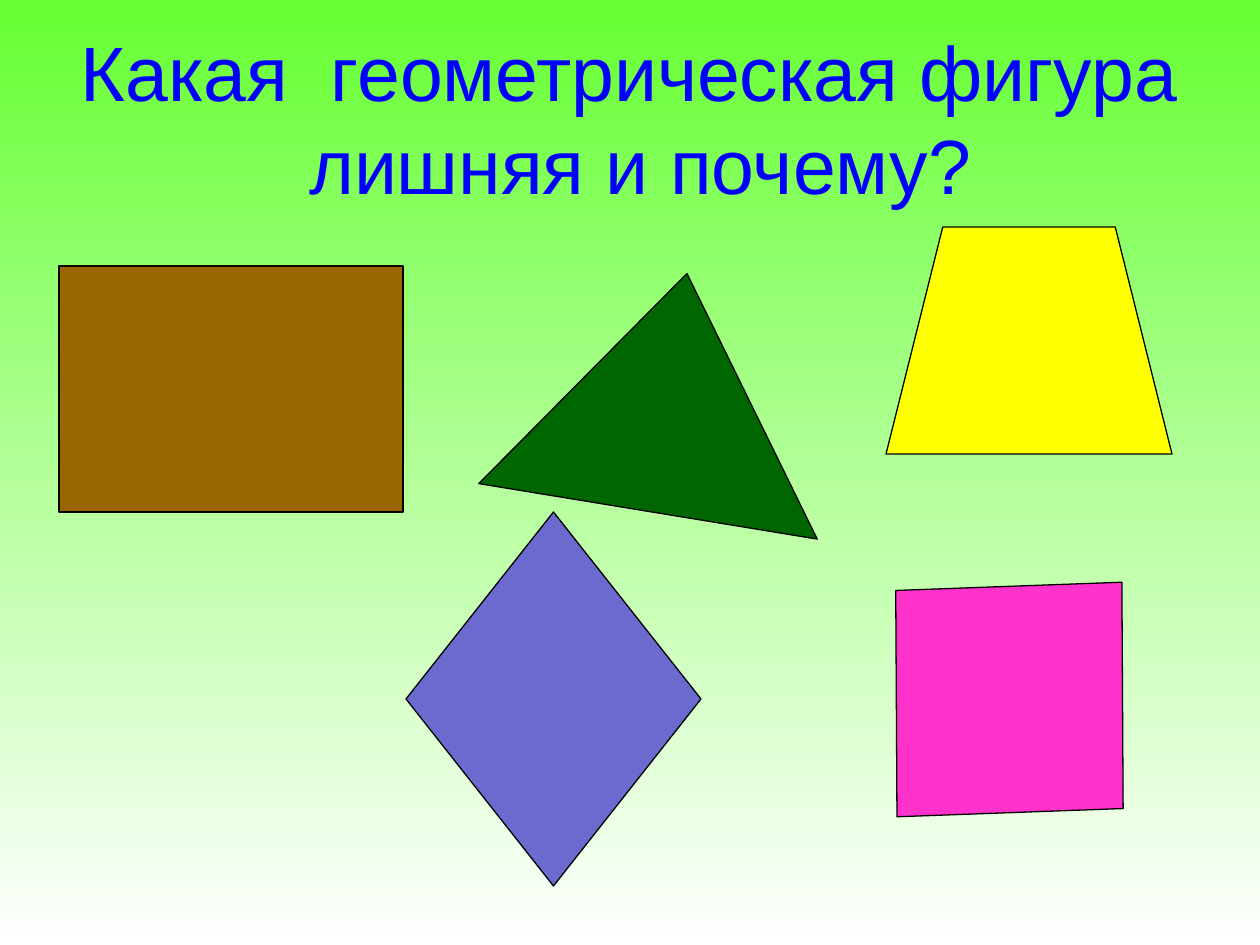
from pptx import Presentation
from pptx.dml.color import RGBColor
from pptx.enum.shapes import MSO_SHAPE
from pptx.enum.text import MSO_ANCHOR, PP_ALIGN
from pptx.util import Inches, Pt

RECT = MSO_SHAPE.RECTANGLE
TRIANGLE = MSO_SHAPE.ISOSCELES_TRIANGLE
DIAMOND = MSO_SHAPE.DIAMOND
TRAPEZOID = MSO_SHAPE.TRAPEZOID
MIDDLE = MSO_ANCHOR.MIDDLE
CENTER = PP_ALIGN.CENTER

LIME = RGBColor(0x66, 0xFF, 0x33)
WHITE = RGBColor(0xFF, 0xFF, 0xFF)
BLACK = RGBColor(0x00, 0x00, 0x00)
BLUE = RGBColor(0x00, 0x00, 0xFF)
BROWN = RGBColor(0x99, 0x66, 0x00)
GREEN = RGBColor(0x00, 0x66, 0x00)
VIOLET = RGBColor(0x6B, 0x6B, 0xCF)
YELLOW = RGBColor(0xFF, 0xFF, 0x00)
PINK = RGBColor(0xFF, 0x33, 0xCC)

SCALE = Inches(1) / 126
FIGURES = [
    (RECT, (108, 217, 246, 344), BROWN, 90),
    (TRIANGLE, (496, 272, 343, 241), GREEN, 9.3),
    (DIAMOND, (406, 512, 295, 374), VIOLET, 0),
    (TRAPEZOID, (886, 227, 286, 227), YELLOW, 0),
    (DIAMOND, (847, 542, 325, 315), PINK, 313.8),
]


def px(*sizes):
    return [round(size * SCALE) for size in sizes]


def paint_back(slide):
    fill = slide.background.fill
    fill.gradient()
    fill.gradient_angle = 270
    for stop, color in zip(fill.gradient_stops, (LIME, WHITE)):
        stop.color.rgb = color


def add_title(slide, text, box):
    frame = slide.shapes.add_textbox(*px(*box)).text_frame
    frame.word_wrap = True
    frame.vertical_anchor = MIDDLE
    frame.text = text
    line = frame.paragraphs[0]
    line.alignment = CENTER
    font = line.runs[0].font
    font.name = "Arial"
    font.size = Pt(44)
    font.color.rgb = BLUE


def add_figure(slide, kind, box, color, angle):
    shape = slide.shapes.add_shape(kind, *px(*box))
    shape.rotation = angle
    shape.shadow.inherit = False
    shape.fill.solid()
    shape.fill.fore_color.rgb = color
    shape.line.color.rgb = BLACK
    shape.line.width = Pt(0.75)


def main():
    deck = Presentation()
    deck.slide_width, deck.slide_height = px(1260, 945)
    slide = deck.slides.add_slide(deck.slide_layouts[6])
    paint_back(slide)
    add_title(slide, "Какая  геометрическая фигура  лишняя и почему?",
              (63, 38, 1134, 158))
    for figure in FIGURES:
        add_figure(slide, *figure)
    deck.save("out.pptx")


if __name__ == "__main__":
    main()
